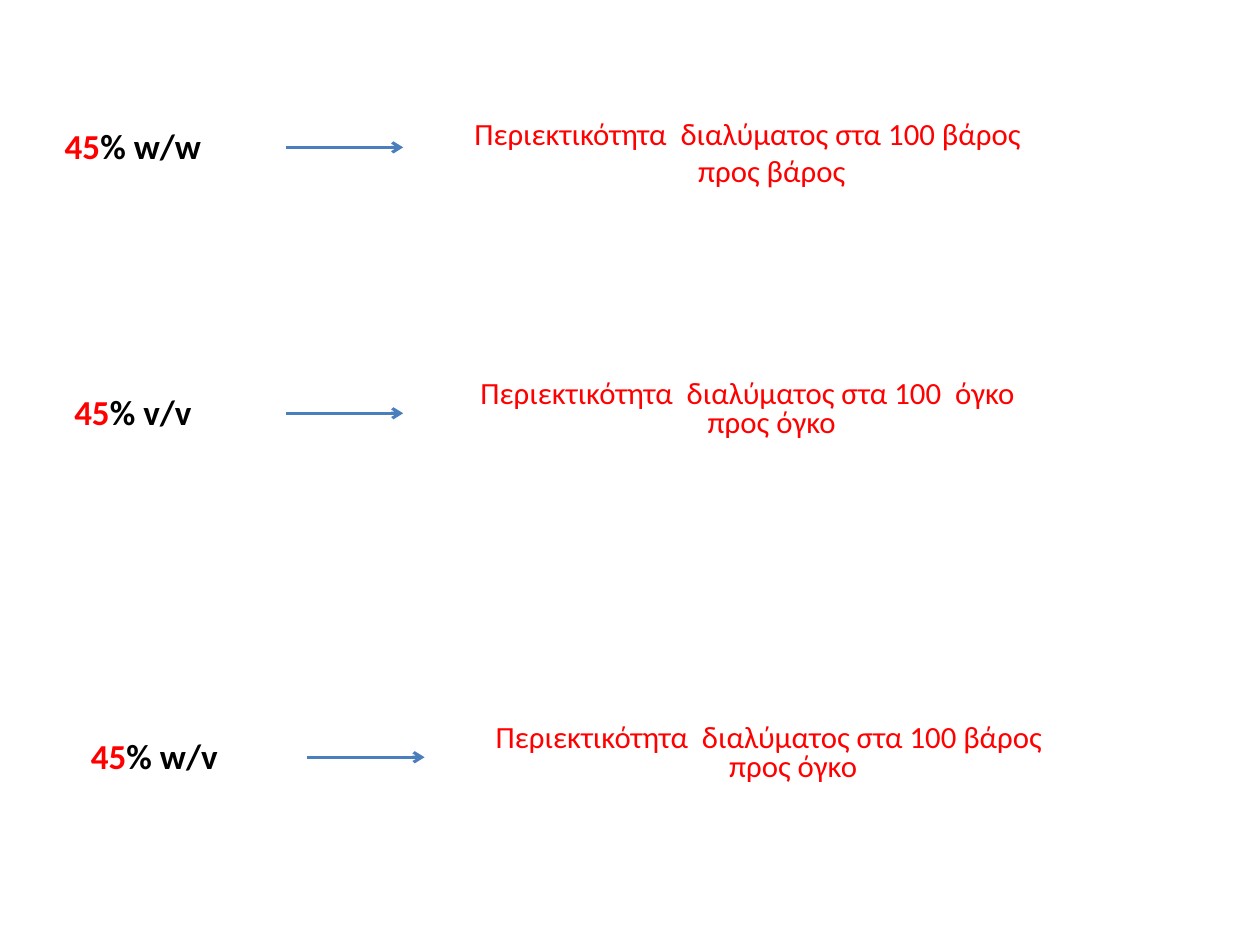
from dataclasses import dataclass

import pptx
import pptx.dml.color
import pptx.enum.shapes
import pptx.enum.text
import pptx.oxml
import pptx.oxml.ns
import pptx.util
from pptx.util import Inches

COLORS = {"red": "FF0000", "black": "000000", "arrow": "4B7EBC"}
DESCRIPTION_FORMAT = {"name": "Calibri", "size": pptx.util.Pt(17.6)}
LABEL_FORMAT = {"name": "Calibri", "size": pptx.util.Pt(20), "bold": True}
HANGING_INDENT = Inches(0.38)
BOX_HEIGHT = 0.63


@dataclass
class Concentration:
    unit: str
    description: str
    left: float
    top: float
    line_spacing: float


CONCENTRATIONS = [
    Concentration("% w/w", "Περιεκτικότητα  διαλύματος στα 100 βάρος προς βάρος", 0, 0.86, 1.0),
    Concentration("% v/v", "Περιεκτικότητα  διαλύματος στα 100  όγκο προς όγκο", 0, 2.97, 0.8),
    Concentration("% w/v", "Περιεκτικότητα  διαλύματος στα 100 βάρος προς όγκο", 0.17, 5.7, 0.8),
]


def color(name: str) -> pptx.dml.color.RGBColor:
    return pptx.dml.color.RGBColor.from_string(COLORS[name])


def add_text(slide, left: float, top: float, width: float, runs: list[tuple[str, str]],
             font_format: dict, line_spacing: float = 1.0) -> None:
    """Add a centred, hanging-indent text box; runs are (text, colour name)."""
    shape = slide.shapes.add_textbox(Inches(left), Inches(top), Inches(width), Inches(BOX_HEIGHT))
    shape.text_frame.word_wrap = True
    paragraph = shape.text_frame.paragraphs[0]
    paragraph.alignment = pptx.enum.text.PP_ALIGN.CENTER
    paragraph.line_spacing = line_spacing
    properties = paragraph._p.get_or_add_pPr()
    properties.set("marL", str(HANGING_INDENT))
    properties.set("indent", str(-HANGING_INDENT))
    for text, color_name in runs:
        run = paragraph.add_run()
        run.text = text
        for attribute, value in font_format.items():
            setattr(run.font, attribute, value)
        run.font.color.rgb = color(color_name)


def add_arrow(slide, left: float, top: float, length: float) -> None:
    connector = slide.shapes.add_connector(
        pptx.enum.shapes.MSO_CONNECTOR.STRAIGHT,
        Inches(left), Inches(top), Inches(left + length), Inches(top))
    connector.line.color.rgb = color("arrow")
    connector.line.width = pptx.util.Pt(1.75)
    # Open arrowhead, no shadow
    line = connector.line._get_or_add_ln()
    pptx.oxml.ns.qn("a:tailEnd")
    namespace = pptx.oxml.ns.nsdecls("a")
    line.append(pptx.oxml.parse_xml(f'<a:tailEnd {namespace} type="arrow"/>'))
    connector._element.spPr.append(pptx.oxml.parse_xml(f"<a:effectLst {namespace}/>"))


def add_concentration(slide, row: Concentration) -> None:
    add_text(slide, row.left + 3.59, row.top, 4.69, [(row.description, "red")],
             DESCRIPTION_FORMAT, row.line_spacing)
    add_text(slide, row.left, row.top + 0.08, 2.11, [("45", "red"), (row.unit, "black")],
             LABEL_FORMAT)
    add_arrow(slide, row.left + 2.27, row.top + 0.31, 0.93)


def main() -> None:
    presentation = pptx.Presentation()
    presentation.slide_width = Inches(10)
    presentation.slide_height = Inches(7.5)
    # The slide has no title, so it uses the blank layout
    slide = presentation.slides.add_slide(presentation.slide_layouts[6])
    for row in CONCENTRATIONS:
        add_concentration(slide, row)
    presentation.save("out.pptx")


if __name__ == "__main__":
    main()
